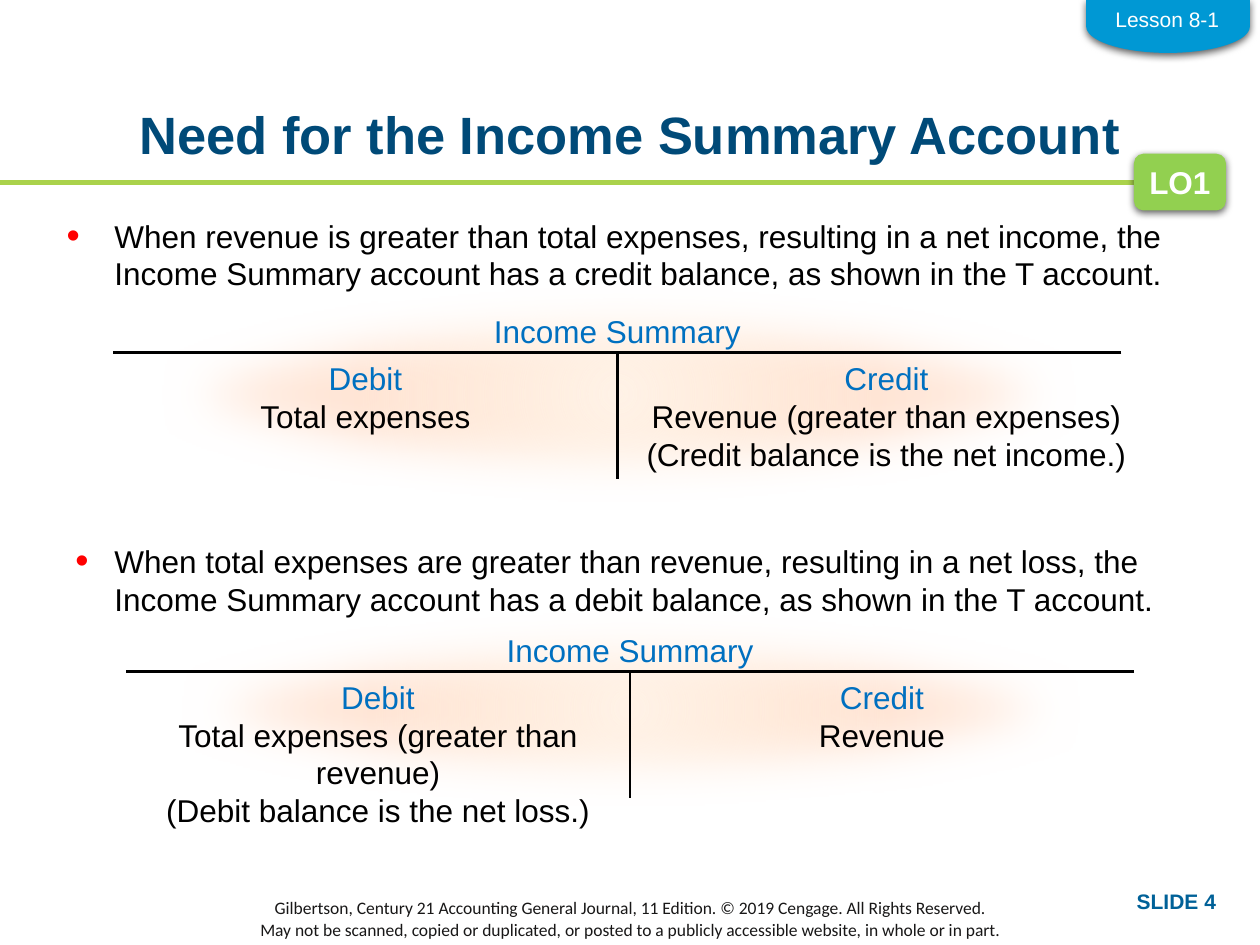
from dataclasses import dataclass

from lxml import etree
from pptx import Presentation
from pptx.dml.color import RGBColor
from pptx.enum.shapes import MSO_CONNECTOR, MSO_SHAPE
from pptx.enum.text import MSO_ANCHOR, PP_ALIGN
from pptx.oxml import parse_xml
from pptx.oxml.ns import nsdecls, qn
from pptx.util import Inches, Pt

LEFT, CENTER, RIGHT = PP_ALIGN.LEFT, PP_ALIGN.CENTER, PP_ALIGN.RIGHT
TOP, MIDDLE = MSO_ANCHOR.TOP, MSO_ANCHOR.MIDDLE
STRAIGHT = MSO_CONNECTOR.STRAIGHT
ELLIPSE, ROUNDED, DELAY = MSO_SHAPE.OVAL, MSO_SHAPE.ROUNDED_RECTANGLE, MSO_SHAPE.FLOWCHART_DELAY
BLACK, WHITE, BLUE, RED = "000000", "FFFFFF", "0070C0", "FF0000"
HALF_WIDTH = 4


@dataclass
class Line:
    text: str
    color: str = BLACK
    size: float = 18
    bold: bool = False
    font: str = "Arial"


@dataclass
class TAccount:
    left: float
    bar_top: float
    glow_top: float
    glow_height: float
    debit: list[str]
    credit: list[str]
    credit_width: float = HALF_WIDTH
    debit_inset: float = 0.1


@dataclass
class Bullet:
    left: float
    top: float
    width: float
    height: float
    margin: float
    hanging: float
    text: str


ACCOUNTS = [
    TAccount(1, 5.33, 4.83, 1.58,
             ["Total expenses (greater than revenue)", "(Debit balance is the net loss.)"],
             ["Revenue"], debit_inset=0.05),
    TAccount(0.9, 2.8, 2.25, 1.75,
             ["Total expenses"],
             ["Revenue (greater than expenses)", "(Credit balance is the net income.)"],
             credit_width=4.27),
]
BULLETS = [
    Bullet(0.41, 1.67, 9.17, 1.17, 0.4, 0.38,
           "When revenue is greater than total expenses, resulting in a net income, the "
           "Income Summary account has a credit balance, as shown in the T account."),
    Bullet(0.42, 4.25, 9.16, 0.98, 0.39, 0.31,
           "When total expenses are greater than revenue, resulting in a net loss, the "
           "Income Summary account has a debit balance, as shown in the T account."),
]


def rgb(color: str) -> RGBColor:
    return RGBColor.from_string(color)


def write(shape, lines: list[Line], align=CENTER, wrap: bool = True,
          inset: tuple[float, float] = (0.1, 0.05), anchor=TOP) -> None:
    frame = shape.text_frame
    across, down = Inches(inset[0]), Inches(inset[1])
    settings = {"word_wrap": wrap, "vertical_anchor": anchor, "margin_left": across,
                "margin_right": across, "margin_top": down, "margin_bottom": down}
    for name, value in settings.items():
        setattr(frame, name, value)
    for index, line in enumerate(lines):
        paragraph = frame.add_paragraph() if index else frame.paragraphs[0]
        paragraph.alignment = align
        run = paragraph.add_run()
        run.text = line.text
        for name, value in {"name": line.font, "size": Pt(line.size), "bold": line.bold}.items():
            setattr(run.font, name, value)
        run.font.color.rgb = rgb(line.color)


def add_text(slide, left: float, top: float, width: float, height: float,
             lines: list[Line], **options):
    box = slide.shapes.add_textbox(Inches(left), Inches(top), Inches(width), Inches(height))
    write(box, lines, **options)
    return box


def add_line(slide, start: tuple[float, float], end: tuple[float, float],
             color: str = BLACK, width: float = 1.5) -> None:
    connector = slide.shapes.add_connector(STRAIGHT, *map(Inches, start + end))
    connector.line.color.rgb = rgb(color)
    connector.line.width = Pt(width)
    etree.SubElement(connector._element.spPr, qn("a:effectLst"))


def add_shape(slide, preset, left: float, top: float, width: float, height: float, color: str):
    shape = slide.shapes.add_shape(preset, Inches(left), Inches(top), Inches(width), Inches(height))
    shape.shadow.inherit = False
    shape.fill.solid()
    shape.fill.fore_color.rgb = rgb(color)
    shape.line.fill.background()
    return shape


def add_effect(shape, content: str) -> None:
    effects = shape._element.spPr.find(qn("a:effectLst"))
    effects.append(parse_xml(content))


def add_drop_shadow(shape) -> None:
    add_effect(shape, f'<a:outerShdw {nsdecls("a")} blurRad="{Pt(4.5)}" dist="{Pt(1.5)}" '
                      'dir="5400000" rotWithShape="0"><a:srgbClr val="000000">'
                      '<a:alpha val="63000"/></a:srgbClr></a:outerShdw>')


def add_glow(slide, account: TAccount) -> None:
    glow = add_shape(slide, ELLIPSE, account.left, account.glow_top, 2 * HALF_WIDTH,
                     account.glow_height, "FFE5D5")
    properties = glow._element.spPr
    gradient = parse_xml(
        f'<a:gradFill {nsdecls("a")} rotWithShape="1"><a:gsLst>'
        '<a:gs pos="0"><a:srgbClr val="FFE5CD"><a:alpha val="48000"/></a:srgbClr></a:gs>'
        '<a:gs pos="50000"><a:srgbClr val="FFE5D5"/></a:gs>'
        '<a:gs pos="100000"><a:srgbClr val="FFF2EA"/></a:gs></a:gsLst><a:path path="circle">'
        '<a:fillToRect l="50000" t="50000" r="50000" b="50000"/></a:path></a:gradFill>')
    properties.replace(properties.find(qn("a:solidFill")), gradient)
    add_effect(glow, f'<a:softEdge {nsdecls("a")} rad="{Inches(0.35)}"/>')


def add_account(slide, account: TAccount) -> None:
    left, top = account.left, account.bar_top
    middle = left + HALF_WIDTH
    add_glow(slide, account)
    add_text(slide, middle - 1.57, top - 0.37, 3.14, 0.4, [Line("Income Summary", BLUE)])
    add_line(slide, (left + 2 * HALF_WIDTH, top), (left, top))
    add_line(slide, (middle, top), (middle, top + 1))
    sides = [("Debit", account.debit, left, HALF_WIDTH, account.debit_inset),
             ("Credit", account.credit, middle, account.credit_width, 0.1)]
    for heading, entries, side_left, width, inset in sides:
        lines = [Line(heading, BLUE)] + [Line(entry) for entry in entries]
        add_text(slide, side_left, top, width, 0.11 + 0.3 * len(lines), lines, inset=(inset, 0.05))


def add_bullet(slide, bullet: Bullet) -> None:
    box = add_text(slide, bullet.left, bullet.top, bullet.width, bullet.height,
                   [Line(bullet.text)], align=LEFT)
    properties = box.text_frame.paragraphs[0]._p.get_or_add_pPr()
    properties.set("marL", str(Inches(bullet.margin)))
    properties.set("indent", str(-Inches(bullet.hanging)))
    color = etree.SubElement(properties, qn("a:buClr"))
    etree.SubElement(color, qn("a:srgbClr"), val=RED)
    etree.SubElement(properties, qn("a:buSzPct"), val="120000")
    etree.SubElement(properties, qn("a:buFont"), typeface="Arial")
    etree.SubElement(properties, qn("a:buChar"), char="•")


def main() -> None:
    presentation = Presentation()
    presentation.slide_width, presentation.slide_height = Inches(10), Inches(7.5)
    slide = presentation.slides.add_slide(presentation.slide_layouts[6])

    # Rule, copyright and title
    add_line(slide, (0, 1.45), (9.5, 1.45), "AAD24B", 3)
    notice = ["Gilbertson, Century 21 Accounting General Journal, 11 Edition. "
              "© 2019 Cengage. All Rights Reserved.",
              "May not be scanned, copied or duplicated, or posted to a publicly "
              "accessible website, in whole or in part."]
    add_text(slide, 0, 7.14, 10, 0.3,
             [Line(text, "181717", 10, font="Calibri") for text in notice], anchor=MIDDLE)
    title = add_text(slide, 0.69, 0.87, 8.62, 0.63,
                     [Line("Need for the Income Summary Account", "004A78", 30, True)],
                     inset=(0, 0))
    title.text_frame.paragraphs[0].line_spacing = 0.9

    # T accounts and their explanations
    for account in ACCOUNTS:
        add_account(slide, account)
    for bullet in BULLETS:
        add_bullet(slide, bullet)

    # Objective badge, slide number and lesson tab
    badge = add_shape(slide, ROUNDED, 9, 1.22, 0.73, 0.45, "92D050")
    add_drop_shadow(badge)
    write(badge, [Line("LO1", WHITE, bold=True)], wrap=False, anchor=MIDDLE)
    add_text(slide, 7.75, 7, 2, 0.3, [Line("SLIDE 4", "006198", 12, True)], align=RIGHT)
    tab = add_shape(slide, DELAY, 9.06, -0.44, 0.42, 1.3, "0098D4")
    tab.rotation = 90
    add_drop_shadow(tab)
    add_text(slide, 8.75, 0, 1.03, 0.3, [Line("Lesson 8-1", WHITE, 12)], wrap=False)

    presentation.save("out.pptx")


if __name__ == "__main__":
    main()
